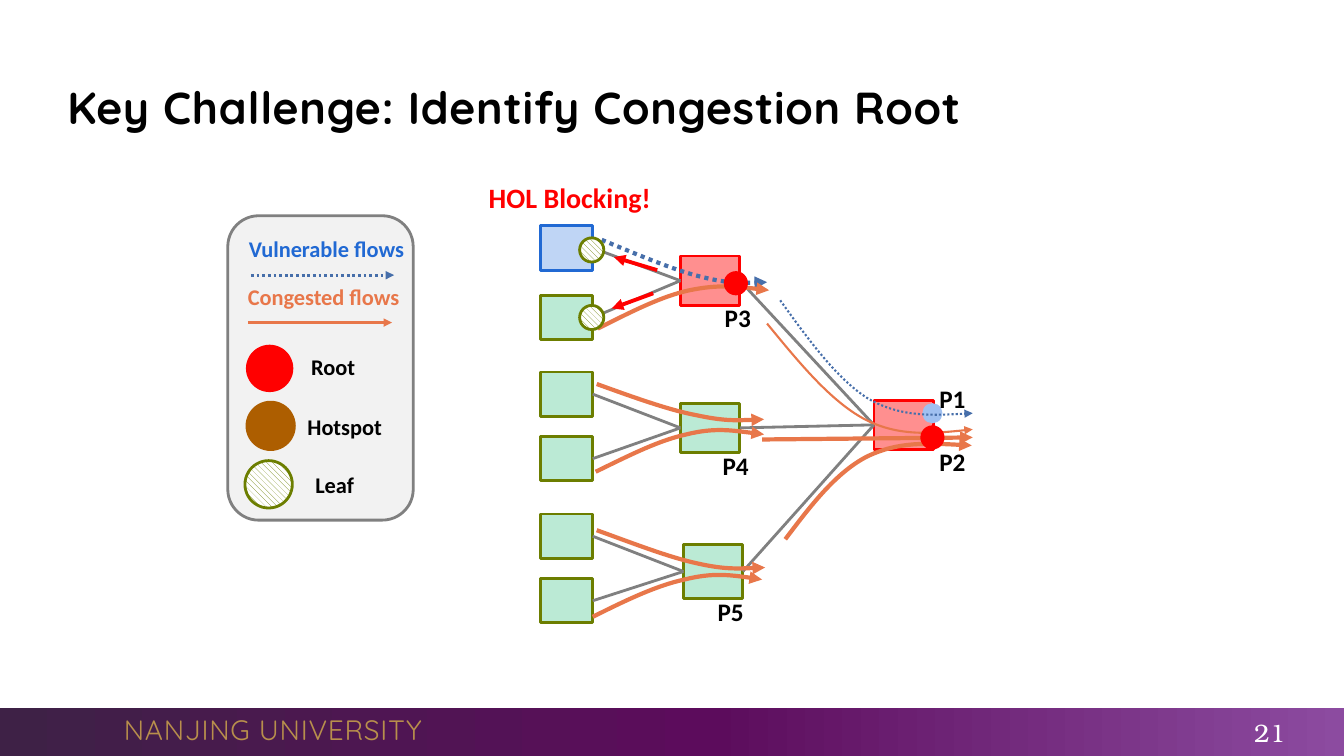
"""Build the slide on finding a congestion root, laid out on a grid of tenth-inch cells."""
from copy import deepcopy
from dataclasses import dataclass
from typing import Optional

from lxml import etree
from pptx import Presentation
from pptx import util as u
from pptx.dml.color import RGBColor
from pptx.enum import dml, shapes, text
from pptx.oxml import ns

COLUMNS, ROWS = 133.33, 75
CELL = u.Inches(0.1)
RIGHT_SIDE, LEFT_SIDE = 3, 1
Point = tuple[float, float]
Box = tuple[float, float, float, float]


@dataclass(frozen=True)
class Theme:
    black: str = "000000"
    white: str = "FFFFFF"
    grey: str = "808080"
    panel: str = "F2F2F2"
    red: str = "FF0000"
    pink: str = "FF8F8F"
    olive: str = "6C7E00"
    mint: str = "BBEAD5"
    blue: str = "2169D3"
    pale_blue: str = "BFD5F5"
    sky: str = "A0C0F0"
    vulnerable: str = "476FAA"
    congested: str = "E8774A"
    hotspot: str = "AD5E00"
    gold: str = "B88F4C"
    footer: tuple = ((0, "3E2146"), (0.53, "5C0C5C"), (1, "8C4BA0"))
    body_font: str = "Calibri"
    brand_font: str = "Quicksand"
    number_font: str = "TeX Gyre Bonum"
    title_size: int = 32
    large: int = 20
    medium: int = 18
    small: int = 16
    outline: float = 2


THEME = Theme()


@dataclass(frozen=True)
class Label:
    words: str
    box: Box
    size: int = THEME.medium
    colour: str = THEME.black
    font: str = THEME.body_font
    bold: bool = True
    align: text.PP_ALIGN = text.PP_ALIGN.LEFT
    anchor: text.MSO_ANCHOR = text.MSO_ANCHOR.TOP
    wrap: bool = True
    spacing: int = 0


@dataclass(frozen=True)
class Block:
    box: Box
    fill: str
    border: Optional[str] = None
    kind: shapes.MSO_SHAPE = shapes.MSO_SHAPE.RECTANGLE
    pattern: Optional[dml.MSO_PATTERN] = None
    rotation: float = 0


@dataclass(frozen=True)
class Flow:
    points: tuple[Point, ...]
    colour: str = THEME.congested
    width: float = 3
    dotted: bool = False


@dataclass(frozen=True)
class Switch:
    block: Block
    host_tops: tuple[float, float]


def disc(left: float, top: float, size: float, fill: str, border: Optional[str] = None,
         pattern: Optional[dml.MSO_PATTERN] = None) -> Block:
    return Block((left, top, size, size), fill, border, shapes.MSO_SHAPE.OVAL, pattern, 90)


def leaf(left: float, top: float, size: float) -> Block:
    return disc(left, top, size, THEME.olive, THEME.olive, dml.MSO_PATTERN.WIDE_DOWNWARD_DIAGONAL)


def host(top: float, fill: str = THEME.mint, border: str = THEME.olive) -> Block:
    return Block((53.6, top, 5.2, 4.4), fill, border)


def port_label(words: str, left: float, top: float) -> Label:
    return Label(words, (left, top, 8.9, 4))


def legend_name(words: str, left: float, top: float, width: float) -> Label:
    return Label(words, (left, top, width, 3.7), THEME.small, align=text.PP_ALIGN.CENTER)


ROOT_SWITCH = Block((86.7, 39.7, 5.9, 4.9), THEME.pink, THEME.red)
SWITCHES = (
    Switch(Block((67.5, 25.4, 5.9, 4.9), THEME.pink, THEME.red), (22.4, 29.3)),
    Switch(Block((67.5, 40, 5.9, 4.9), THEME.mint, THEME.olive), (36.9, 43.3)),
    Switch(Block((67.8, 54, 5.9, 5.4), THEME.mint, THEME.olive), (51, 57.4)),
)
VICTIM_TOP = 22.4
LEGEND = Block((22.6, 21.4, 18.4, 30.2), THEME.panel, THEME.grey, shapes.MSO_SHAPE.ROUNDED_RECTANGLE)
FREE_PORT = disc(91.5, 40, 2, THEME.sky)
FLOWS = (
    Flow(((77.4, 29.8), (80.2, 33.7), (83.1, 37.7), (86.2, 39.6), (89.4, 41.4), (92.9, 41.2), (96.5, 41)),
         THEME.vulnerable, 1.5, True),
    Flow(((76.1, 32.1), (79.3, 36), (82.4, 39.8), (85.8, 41.6), (89.1, 43.3), (92.8, 43), (96.5, 42.6)),
         width=1.5),
    Flow(((75.6, 43.6), (96.5, 43.4))),
    Flow(((77.9, 53.5), (80.4, 50.2), (82.9, 46.9), (86, 45.3), (89.1, 43.8), (92.7, 44), (96.4, 44.2))),
    Flow(((59.7, 23.8), (63.1, 25.2), (66.6, 26.7), (69.3, 27.4), (72, 28.1), (74, 28.1), (76.1, 28)),
         THEME.vulnerable, dotted=True),
    Flow(((59.3, 32.6), (62.5, 31), (65.6, 29.4), (68.4, 28.8), (71.3, 28.2), (73.8, 28.5), (76.3, 28.8))),
    Flow(((59.2, 38.1), (62.8, 39.4), (66.4, 40.7), (69.1, 41.2), (71.9, 41.8), (73.9, 41.7), (75.8, 41.6))),
    Flow(((59.1, 46.8), (62.2, 45.3), (65.3, 43.7), (68.1, 43.1), (70.9, 42.4), (73.4, 42.8), (75.8, 43.1))),
    Flow(((59.2, 52.6), (62.8, 53.9), (66.4, 55.3), (69.2, 55.9), (71.9, 56.5), (73.9, 56.4), (75.9, 56.3))),
    Flow(((58.8, 61.2), (62, 59.6), (65.1, 58.1), (67.9, 57.5), (70.7, 56.8), (73.1, 57.1), (75.6, 57.5))),
    Flow(((24.9, 27.3), (39.1, 27.3)), THEME.vulnerable, 2, True),
    Flow(((24.6, 32), (38.9, 32)), width=2),
    Flow(((64.8, 29.1), (60.7, 30.6)), THEME.red, 2.75),
    Flow(((65.2, 26.8), (60.9, 25.5)), THEME.red, 2.75),
)
DISCS = (
    disc(24.4, 34.2, 4.7, THEME.red),
    disc(24.5, 39.9, 4.7, THEME.hotspot, THEME.hotspot, dml.MSO_PATTERN.DARK_VERTICAL),
    leaf(24.3, 45.7, 4.7),
    disc(71.8, 26.9, 2.4, THEME.red),
    leaf(57.5, 30.3, 2.4),
    leaf(57.5, 23.6, 2.4),
    disc(91.3, 42.2, 2.4, THEME.red),
)
LABELS = (
    Label("Key Challenge: Identify Congestion Root", (5.7, 6.7, 120, 7.7), THEME.title_size,
          font=THEME.brand_font, anchor=text.MSO_ANCHOR.MIDDLE, spacing=50),
    Label("NANJING UNIVERSITY", (11.3, 70.2, 31.7, 4.4), THEME.large, THEME.gold, THEME.brand_font,
          False, anchor=text.MSO_ANCHOR.MIDDLE, wrap=False, spacing=50),
    Label("21", (117.9, 70.9, 10.6, 3.5), THEME.medium, THEME.white, THEME.number_font, False,
          text.PP_ALIGN.RIGHT, text.MSO_ANCHOR.MIDDLE),
    Label("HOL Blocking!", (47.5, 17.4, 18.2, 4.4), THEME.large, THEME.red, wrap=False),
    Label("Vulnerable flows", (23.7, 22.8, 17.6, 3.7), THEME.small, THEME.blue),
    Label("Congested flows", (23.6, 27.6, 17.6, 3.7), THEME.small, THEME.congested),
    legend_name("Root", 25.9, 34.5, 14.3),
    legend_name("Hotspot", 25.9, 40.5, 16.6),
    legend_name("Leaf", 24.9, 46.3, 16.6),
    port_label("P1", 92.2, 37.5),
    port_label("P2", 92.2, 43.8),
    port_label("P3", 70.9, 29.5),
    port_label("P4", 70.7, 44.2),
    port_label("P5", 70.2, 58.7),
)


def cells(*counts: float) -> list[int]:
    return [u.Emu(round(count * CELL)) for count in counts]


def rgb(colour: str) -> RGBColor:
    return RGBColor.from_string(colour)


def draw_block(slide, block: Block):
    shape = slide.shapes.add_shape(block.kind, *cells(*block.box))
    shape.shadow.inherit = False
    shape.rotation = block.rotation
    if block.pattern is None:
        shape.fill.solid()
        shape.fill.fore_color.rgb = rgb(block.fill)
    else:
        shape.fill.patterned()
        shape.fill.pattern = block.pattern
        shape.fill.fore_color.rgb = rgb(block.fill)
        shape.fill.back_color.rgb = rgb(THEME.white)
    if block.border is None:
        shape.line.fill.background()
    else:
        shape.line.color.rgb = rgb(block.border)
        shape.line.width = u.Pt(THEME.outline)
    return shape


def draw_footer(slide) -> None:
    bar = draw_block(slide, Block((0, 70.2, COLUMNS, ROWS - 70.2), THEME.footer[0][1]))
    bar.fill.gradient()
    bar.fill.gradient_angle = 0
    stop_list = next(bar._element.iter(ns.qn("a:gsLst")))
    stop_list.insert(1, deepcopy(stop_list[0]))
    for stop, (position, colour) in zip(bar.fill.gradient_stops, THEME.footer):
        stop.position = position
        stop.color.rgb = rgb(colour)


def add_line(slide, start: Point, end: Point, colour: str, width: float):
    connector = slide.shapes.add_connector(shapes.MSO_CONNECTOR.STRAIGHT, *cells(*start, *end))
    connector.line.color.rgb = rgb(colour)
    connector.line.width = u.Pt(width)
    etree.SubElement(connector._element.spPr, ns.qn("a:effectLst"))
    return connector


def draw_link(slide, source, target) -> None:
    link = add_line(slide, (0, 0), (1, 1), THEME.grey, THEME.outline)
    link.begin_connect(source, RIGHT_SIDE)
    link.end_connect(target, LEFT_SIDE)


def add_curve(slide, flow: Flow):
    start, *others = [tuple(cells(*point)) for point in flow.points]
    builder = slide.shapes.build_freeform(*start)
    builder.add_line_segments(others, close=False)
    shape = builder.convert_to_shape()
    shape.shadow.inherit = False
    shape.fill.background()
    shape.line.color.rgb = rgb(flow.colour)
    shape.line.width = u.Pt(flow.width)
    outline = next(shape._element.iter(ns.qn("a:path")))
    segments = outline.findall(ns.qn("a:lnTo"))
    for first in range(0, len(segments), 3):
        bezier = etree.SubElement(outline, ns.qn("a:cubicBezTo"))
        for segment in segments[first:first + 3]:
            bezier.append(segment[0])
            outline.remove(segment)
    return shape


def draw_flow(slide, flow: Flow) -> None:
    if len(flow.points) == 2:
        shape = add_line(slide, *flow.points, flow.colour, flow.width)
    else:
        shape = add_curve(slide, flow)
    if flow.dotted:
        shape.line.dash_style = dml.MSO_LINE.ROUND_DOT
    line = next(shape._element.iter(ns.qn("a:ln")))
    etree.SubElement(line, ns.qn("a:tailEnd"), type="triangle")


def draw_label(slide, label: Label) -> None:
    frame = slide.shapes.add_textbox(*cells(*label.box)).text_frame
    frame.word_wrap = label.wrap
    frame.vertical_anchor = label.anchor
    paragraph = frame.paragraphs[0]
    paragraph.text = label.words
    paragraph.alignment = label.align
    font = paragraph.font
    font.name, font.size, font.bold = label.font, u.Pt(label.size), label.bold
    font.color.rgb = rgb(label.colour)
    if label.spacing:
        font._element.set("spc", str(label.spacing))


def main() -> None:
    presentation = Presentation()
    presentation.slide_width, presentation.slide_height = cells(COLUMNS, ROWS)
    slide = presentation.slides.add_slide(presentation.slide_layouts[6])
    draw_footer(slide)
    draw_block(slide, LEGEND)
    root = draw_block(slide, ROOT_SWITCH)
    for switch in SWITCHES:
        middle = draw_block(slide, switch.block)
        draw_link(slide, middle, root)
        for top in switch.host_tops:
            colours = (THEME.pale_blue, THEME.blue) if top == VICTIM_TOP else ()
            draw_link(slide, draw_block(slide, host(top, *colours)), middle)
    draw_block(slide, FREE_PORT)
    for flow in FLOWS:
        draw_flow(slide, flow)
    for marker in DISCS:
        draw_block(slide, marker)
    for label in LABELS:
        draw_label(slide, label)
    presentation.save("out.pptx")


if __name__ == "__main__":
    main()
